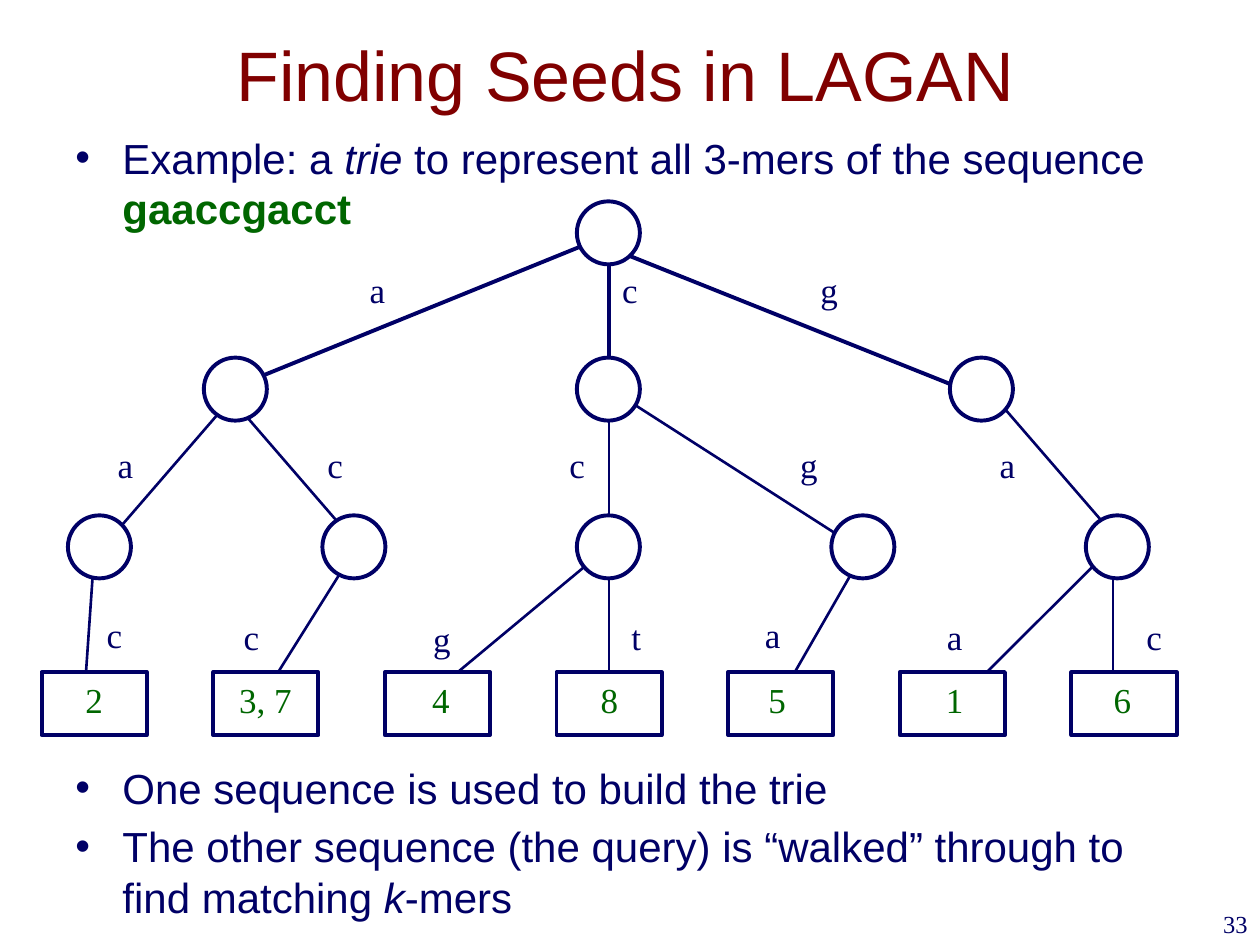
"""Build a slide that shows a trie of all 3-mers of a sequence."""
from lxml import etree
from pptx import Presentation
from pptx import util as u
from pptx.dml.color import RGBColor
from pptx.enum import shapes, text
from pptx.oxml import ns

COLORS = {"title": "800000", "ink": "000066", "value": "006600", "paper": "FFFFFF"}
NODE_SIZE = 1.27
LEAF_WIDTH = 2.12
LABEL_HEIGHT = 1.09
LABEL_WIDTHS = {"a": 0.81, "c": 0.81, "t": 0.71, "3, 7": 1.57}
DIGIT_WIDTH = 0.86

NODE_ROWS = [(11.63, 4.06, 0, 1), (4.11, 7.21, 7.52, 3), (1.37, 10.39, 5.13, 5)]
LEAF_ROW = (0.84, 13.55, 3.46, 7)

ROOT_EDGES = [
    (12.28, 4.91, 12.28, 7.45),
    (11.85, 4.91, 4.66, 7.83),
    (12.07, 4.91, 19.9, 8.04),
]
LOWER_EDGES = [
    (4.66, 8.04, 1.91, 11.22),
    (4.66, 8.04, 7.41, 11.22),
    (12.28, 8.04, 12.28, 11.22),
    (12.28, 7.83, 17.57, 11.22),
    (19.9, 7.83, 22.65, 11.01),
    (1.91, 11.01, 1.69, 14.18),
    (7.2, 11.01, 5.08, 14.39),
    (12.28, 11.01, 8.47, 14.18),
    (12.28, 11.01, 12.28, 14.18),
    (17.36, 11.22, 15.66, 14.18),
    (22.44, 11.01, 19.05, 14.39),
    (22.44, 11.01, 22.44, 14.18),
]
EDGE_LABELS = [
    ("a", 7.2, 5.29), ("c", 12.29, 5.29), ("g", 16.29, 5.29),
    ("a", 2.12, 8.81), ("c", 6.35, 8.81), ("c", 11.23, 8.81),
    ("g", 15.88, 8.81), ("a", 19.9, 8.81),
    ("c", 1.9, 12.25), ("c", 4.66, 12.28), ("g", 8.48, 12.32), ("t", 12.48, 12.28),
    ("a", 15.17, 12.25), ("a", 18.84, 12.28), ("c", 22.86, 12.28),
]
LEAF_VALUES = [
    ("2", 1.47), ("3, 7", 4.57), ("4", 8.46), ("8", 11.86),
    ("5", 15.24), ("1", 18.82), ("6", 22.2),
]


def rgb(name):
    """Return the named colour."""
    return RGBColor.from_string(COLORS[name])


def add_run(paragraph, content, size=24, font="Arial", color="ink", bold=False, italic=False):
    """Add one formatted run to a paragraph."""
    run = paragraph.add_run()
    run.text = content
    run.font.size = u.Pt(size)
    run.font.name = font
    run.font.bold = bold
    run.font.italic = italic
    run.font.color.rgb = rgb(color)


def add_box(slide, left, top, width, height):
    """Add an empty wrapping text box."""
    box = slide.shapes.add_textbox(u.Cm(left), u.Cm(top), u.Cm(width), u.Cm(height))
    box.text_frame.word_wrap = True
    return box


def add_title(slide, content):
    """Place and format the title placeholder."""
    title = slide.shapes.title
    title.left, title.top = u.Cm(1.27), u.Cm(0.43)
    title.width, title.height = u.Cm(22.66), u.Cm(2.11)
    frame = title.text_frame
    frame.auto_size = text.MSO_AUTO_SIZE.NONE
    frame.vertical_anchor = text.MSO_ANCHOR.MIDDLE
    paragraph = frame.paragraphs[0]
    paragraph.alignment = text.PP_ALIGN.CENTER
    add_run(paragraph, content, size=40, color="title")


def add_bullets(slide, top, items):
    """Add a bulleted list whose items are lists of (text, format) pairs."""
    frame = add_box(slide, 1.27, top, 22.66, 3.18).text_frame
    for index, runs in enumerate(items):
        paragraph = frame.add_paragraph() if index else frame.paragraphs[0]
        paragraph.space_before = u.Pt(4.8)
        properties = paragraph._p.get_or_add_pPr()
        properties.set("marL", str(u.Cm(0.95)))
        properties.set("indent", str(-u.Cm(0.95)))
        font = etree.SubElement(properties, ns.qn("a:buFont"))
        font.set("typeface", "Arial")
        etree.SubElement(properties, ns.qn("a:buChar")).set("char", "•")
        for content, style in runs:
            add_run(paragraph, content, **style)


def add_edge(slide, points, width):
    """Add a straight edge of the trie."""
    edge = slide.shapes.add_connector(
        shapes.MSO_CONNECTOR.STRAIGHT, *(u.Cm(value) for value in points))
    edge.line.color.rgb = rgb("ink")
    edge.line.width = u.Pt(width)
    etree.SubElement(edge._element.spPr, ns.qn("a:effectLst"))


def add_row(slide, kind, row, width):
    """Add a row of evenly spaced outlined shapes."""
    left, top, step, count = row
    for index in range(count):
        shape = slide.shapes.add_shape(
            kind, u.Cm(left + index * step), u.Cm(top), u.Cm(width), u.Cm(NODE_SIZE))
        shape.shadow.inherit = False
        shape.fill.solid()
        shape.fill.fore_color.rgb = rgb("paper")
        shape.line.color.rgb = rgb("ink")
        shape.line.width = u.Pt(2.25)


def add_label(slide, content, left, top, color):
    """Add a short label that fits its text."""
    width = LABEL_WIDTHS.get(content, DIGIT_WIDTH)
    frame = add_box(slide, left, top, width, LABEL_HEIGHT).text_frame
    frame.word_wrap = False
    frame.auto_size = text.MSO_AUTO_SIZE.SHAPE_TO_FIT_TEXT
    add_run(frame.paragraphs[0], content, size=20, font="Times New Roman", color=color)


def add_trie(slide):
    """Draw edges, nodes, leaves and labels of the trie."""
    for points in ROOT_EDGES:
        add_edge(slide, points, 2.25)
    for points in LOWER_EDGES:
        add_edge(slide, points, 1.5)
    for row in NODE_ROWS:
        add_row(slide, shapes.MSO_SHAPE.OVAL, row, NODE_SIZE)
    add_row(slide, shapes.MSO_SHAPE.RECTANGLE, LEAF_ROW, LEAF_WIDTH)
    for content, left in LEAF_VALUES:
        add_label(slide, content, left, LEAF_ROW[1], "value")
    for content, left, top in EDGE_LABELS:
        add_label(slide, content, left, top, "ink")


def add_page_number(slide, number):
    """Add the page number at the lower right."""
    paragraph = add_box(slide, 20.11, 18.2, 5.29, 1.27).text_frame.paragraphs[0]
    paragraph.alignment = text.PP_ALIGN.RIGHT
    add_run(paragraph, number, size=14, font="Times New Roman")


def main():
    """Build and save the presentation."""
    presentation = Presentation()
    presentation.slide_width, presentation.slide_height = u.Cm(25.4), u.Cm(19.05)
    slide = presentation.slides.add_slide(presentation.slide_layouts.get_by_name("Title Only"))
    add_title(slide, "Finding Seeds in LAGAN")
    add_bullets(slide, 2.54, [[
        ("Example: a ", {}),
        ("trie", {"italic": True}),
        (" to represent all 3-mers of the sequence ", {}),
        ("gaaccgacct", {"color": "value", "bold": True}),
    ]])
    add_trie(slide)
    add_bullets(slide, 15.24, [
        [("One sequence is used to build the trie", {})],
        [
            ("The other sequence (the query) is “walked” through to find matching ", {}),
            ("k", {"italic": True}),
            ("-mers", {}),
        ],
    ])
    add_page_number(slide, "33")
    presentation.save("out.pptx")


if __name__ == "__main__":
    main()
